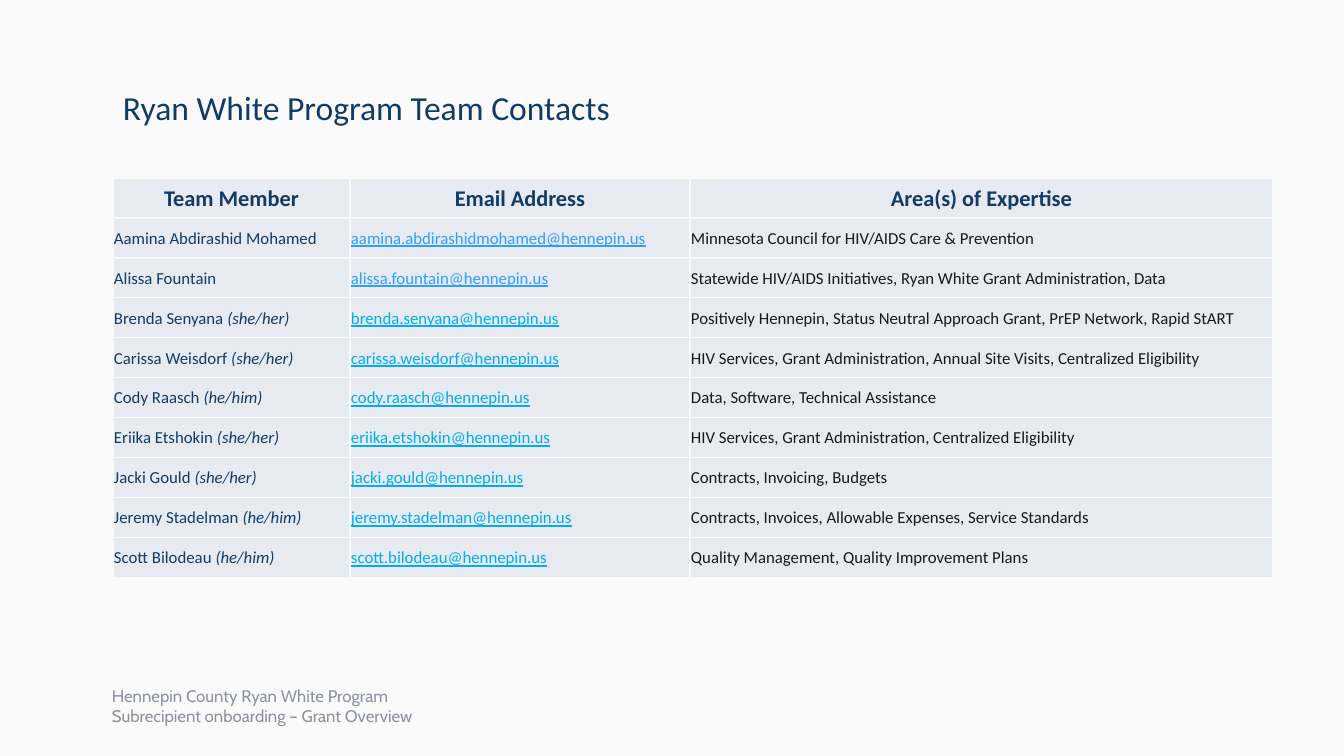
from lxml.etree import SubElement
from pptx import Presentation
from pptx.dml.color import RGBColor
from pptx.enum.text import MSO_ANCHOR as ANCHOR, MSO_AUTO_SIZE as AUTO_SIZE, PP_ALIGN as ALIGN
from pptx.oxml.ns import qn
from pptx.util import Pt

EMU_PER_PX = 12192000 / 1344
NAVY, INK, GREY = "113C66", "191919", "8C92A0"
BLUE, CYAN = "2F9FFF", "00AEEF"
PAPER, CELL = "FAFAFA", "E7EAF0"

HEADERS = ("Team Member", "Email Address", "Area(s) of Expertise")
COLUMN_WIDTHS = (237, 340, 583)
# Name, pronouns, mailbox, mailbox colour, expertise
CONTACTS = (
    ("Aamina Abdirashid Mohamed", "", "aamina.abdirashidmohamed", BLUE,
     "Minnesota Council for HIV/AIDS Care & Prevention"),
    ("Alissa Fountain", "", "alissa.fountain", BLUE,
     "Statewide HIV/AIDS Initiatives, Ryan White Grant Administration, Data"),
    ("Brenda Senyana", "(she/her)", "brenda.senyana", CYAN,
     "Positively Hennepin, Status Neutral Approach Grant, PrEP Network, Rapid StART"),
    ("Carissa Weisdorf", "(she/her)", "carissa.weisdorf", CYAN,
     "HIV Services, Grant Administration, Annual Site Visits, Centralized Eligibility"),
    ("Cody Raasch", "(he/him)", "cody.raasch", CYAN,
     "Data, Software, Technical Assistance"),
    ("Eriika Etshokin", "(she/her)", "eriika.etshokin", CYAN,
     "HIV Services, Grant Administration, Centralized Eligibility"),
    ("Jacki Gould", "(she/her)", "jacki.gould", CYAN,
     "Contracts, Invoicing, Budgets"),
    ("Jeremy Stadelman", "(he/him)", "jeremy.stadelman", CYAN,
     "Contracts, Invoices, Allowable Expenses, Service Standards"),
    ("Scott Bilodeau", "(he/him)", "scott.bilodeau", CYAN,
     "Quality Management, Quality Improvement Plans"),
)


def px(n):
    return round(n * EMU_PER_PX)


def color(hex_code):
    return RGBColor.from_string(hex_code)


def add_run(p, text, size=12, font="Calibri", fill=NAVY, bold=False, italic=False, underline=False):
    r = p.add_run()
    r.text = text
    f = r.font
    f.size, f.name = Pt(size), font
    f.bold, f.italic, f.underline = bold, italic, underline
    f.color.rgb = color(fill)


def add_text(slide, box, lines, anchor=ANCHOR.TOP, auto_size=AUTO_SIZE.NONE, **fmt):
    tf = slide.shapes.add_textbox(*map(px, box)).text_frame
    tf.word_wrap, tf.auto_size, tf.vertical_anchor = True, auto_size, anchor
    for i, line in enumerate(lines):
        p = tf.add_paragraph() if i else tf.paragraphs[0]
        add_run(p, line, **fmt)


def style_cell(cell):
    cell.vertical_anchor = ANCHOR.MIDDLE
    cell.margin_left = cell.margin_right = cell.margin_top = px(1)
    cell.margin_bottom = 0
    # Borders come before the fill in the cell properties
    tc_pr = cell._tc.get_or_add_tcPr()
    for side in ("a:lnL", "a:lnR", "a:lnT", "a:lnB"):
        ln = SubElement(tc_pr, qn(side), w=str(Pt(1)))
        SubElement(SubElement(ln, qn("a:solidFill")), qn("a:srgbClr"), val=PAPER)
    cell.fill.solid()
    cell.fill.fore_color.rgb = color(CELL)


def add_contacts(slide, left, top, row_height):
    rows = len(CONTACTS) + 1
    table = slide.shapes.add_table(rows, len(HEADERS), px(left), px(top),
                                   px(sum(COLUMN_WIDTHS)), px(row_height * rows)).table
    for column, width in zip(table.columns, COLUMN_WIDTHS):
        column.width = px(width)
    for row in table.rows:
        row.height = px(row_height)
    for cell in table.iter_cells():
        style_cell(cell)

    # Header row
    for c, header in enumerate(HEADERS):
        p = table.cell(0, c).text_frame.paragraphs[0]
        p.alignment = ALIGN.CENTER
        add_run(p, header, size=16, bold=True)

    # One row per team member
    for i, (name, pronouns, mailbox, mail_color, expertise) in enumerate(CONTACTS, 1):
        member, email, area = (table.cell(i, c).text_frame.paragraphs[0] for c in range(3))
        add_run(member, f"{name} " if pronouns else name)
        if pronouns:
            add_run(member, pronouns, italic=True)
        add_run(email, f"{mailbox}@hennepin.us", fill=mail_color, underline=True)
        add_run(area, expertise, fill=INK)


def contacts_slide(prs):
    slide = prs.slides.add_slide(prs.slide_layouts[6])
    slide.background.fill.solid()
    slide.background.fill.fore_color.rgb = color(PAPER)
    add_contacts(slide, 113, 178, 40)
    # Title
    add_text(slide, (113, 82, 607, 50), ["Ryan White Program Team Contacts"],
             auto_size=AUTO_SIZE.SHAPE_TO_FIT_TEXT, size=24)
    # Footer
    add_text(slide, (102, 686, 412, 40),
             ["Hennepin County Ryan White Program", "Subrecipient onboarding – Grant Overview"],
             anchor=ANCHOR.MIDDLE, font="Cabin", fill=GREY)


def main():
    prs = Presentation()
    prs.slide_width, prs.slide_height = px(1344), px(756)
    contacts_slide(prs)
    prs.save("out.pptx")


if __name__ == "__main__":
    main()
